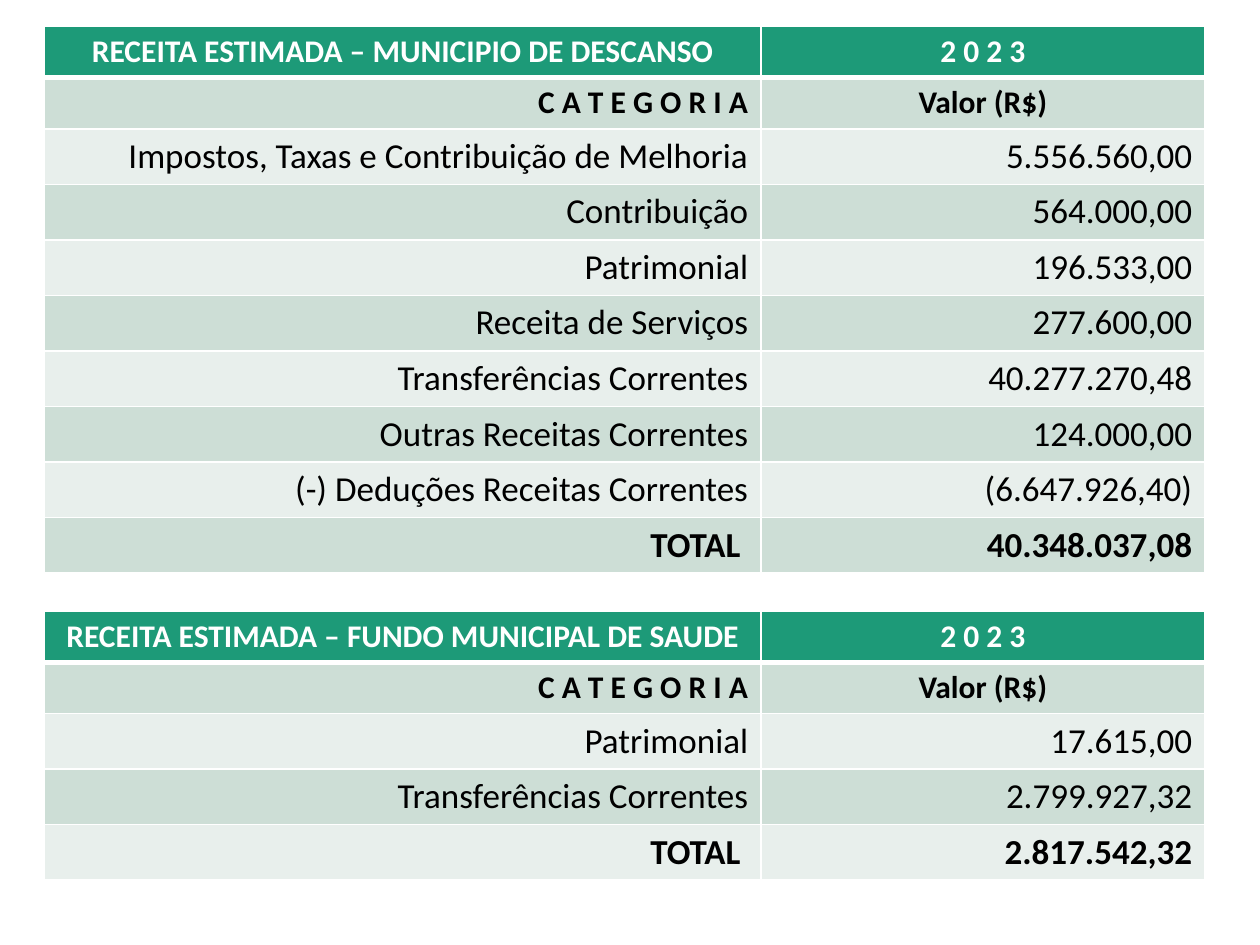
from dataclasses import dataclass

from lxml.etree import SubElement
from pptx import Presentation
from pptx.dml.color import RGBColor
from pptx.enum.text import PP_ALIGN
from pptx.oxml.ns import qn
from pptx.util import Pt


@dataclass(frozen=True)
class Theme:
    """Colours, font and type sizes of the slide."""
    header: str = "1D9A78"
    bands: tuple = ("E8EFEC", "CDDED6")
    white: str = "FFFFFF"
    ink: str = "000000"
    font: str = "Calibri"
    head_size: int = 18
    body_size: int = 20


THEME = Theme()
COLUMN_WIDTHS = (409.4, 253.8)
ROW_HEIGHT = 29.2

MUNICIPALITY = (
    ("RECEITA ESTIMADA – MUNICIPIO DE DESCANSO", "2 0 2 3"),
    ("C A T E G O R I A", "Valor (R$)"),
    ("Impostos, Taxas e Contribuição de Melhoria", "5.556.560,00"),
    ("Contribuição", "564.000,00"),
    ("Patrimonial", "196.533,00"),
    ("Receita de Serviços", "277.600,00"),
    ("Transferências Correntes", "40.277.270,48"),
    ("Outras Receitas Correntes", "124.000,00"),
    ("(-) Deduções Receitas Correntes", "(6.647.926,40)"),
    ("TOTAL ", "40.348.037,08"),
)
HEALTH_FUND = (
    ("RECEITA ESTIMADA – FUNDO MUNICIPAL DE SAUDE", "2 0 2 3"),
    ("C A T E G O R I A", "Valor (R$)"),
    ("Patrimonial", "17.615,00"),
    ("Transferências Correntes", "2.799.927,32"),
    ("TOTAL ", "2.817.542,32"),
)


def write_text(tf, text, *, size, color, bold=False, align=PP_ALIGN.RIGHT):
    """Write one formatted paragraph into a text frame."""
    p = tf.paragraphs[0]
    p.alignment = align
    r = p.add_run()
    r.text = text
    r.font.name = THEME.font
    r.font.size = Pt(size)
    r.font.bold = bold
    r.font.color.rgb = RGBColor.from_string(color)


def style_cell(cell, fill, top=1, bottom=1):
    """Give a cell its white borders and its fill."""
    tc_pr = cell._tc.get_or_add_tcPr()
    for side, width in (("L", 1), ("R", 1), ("T", top), ("B", bottom)):
        ln = SubElement(tc_pr, qn(f"a:ln{side}"), w=str(Pt(width)))
        solid = SubElement(ln, qn("a:solidFill"))
        SubElement(solid, qn("a:srgbClr"), val=THEME.white)
    cell.fill.solid()
    cell.fill.fore_color.rgb = RGBColor.from_string(fill)


def add_revenue_table(s, rows, left, top, width, height):
    """Place a revenue table with header, column titles, items and total."""
    sp = s.shapes.add_table(len(rows), len(COLUMN_WIDTHS),
                            Pt(left), Pt(top), Pt(width), Pt(height))
    table = sp.table
    for column, share in zip(table.columns, COLUMN_WIDTHS):
        column.width = Pt(width * share / sum(COLUMN_WIDTHS))
    for i, row in enumerate(rows):
        table.rows[i].height = Pt(ROW_HEIGHT)
        is_header, is_title = i == 0, i < 2
        for j, text in enumerate(row):
            cell = table.cell(i, j)
            style_cell(cell, THEME.header if is_header else THEME.bands[i % 2],
                       top=3 if i == 1 else 1, bottom=3 if is_header else 1)
            centred = is_header or (is_title and j == 1)
            write_text(cell.text_frame, text,
                       size=THEME.head_size if is_title else THEME.body_size,
                       color=THEME.white if is_header else THEME.ink,
                       bold=is_title or i == len(rows) - 1,
                       align=PP_ALIGN.CENTER if centred else PP_ALIGN.RIGHT)
    sp.height = Pt(height)


def main():
    """Build the slide with both revenue tables and save it."""
    prs = Presentation()
    prs.slide_width, prs.slide_height = Pt(720), Pt(540)
    s = prs.slides.add_slide(prs.slide_layouts[6])
    left, width = 25.4, sum(COLUMN_WIDTHS)
    add_revenue_table(s, MUNICIPALITY, left, 15.2, width, 308.2)
    add_revenue_table(s, HEALTH_FUND, left, 349.4, width, 151.9)
    prs.save("out.pptx")


if __name__ == "__main__":
    main()
